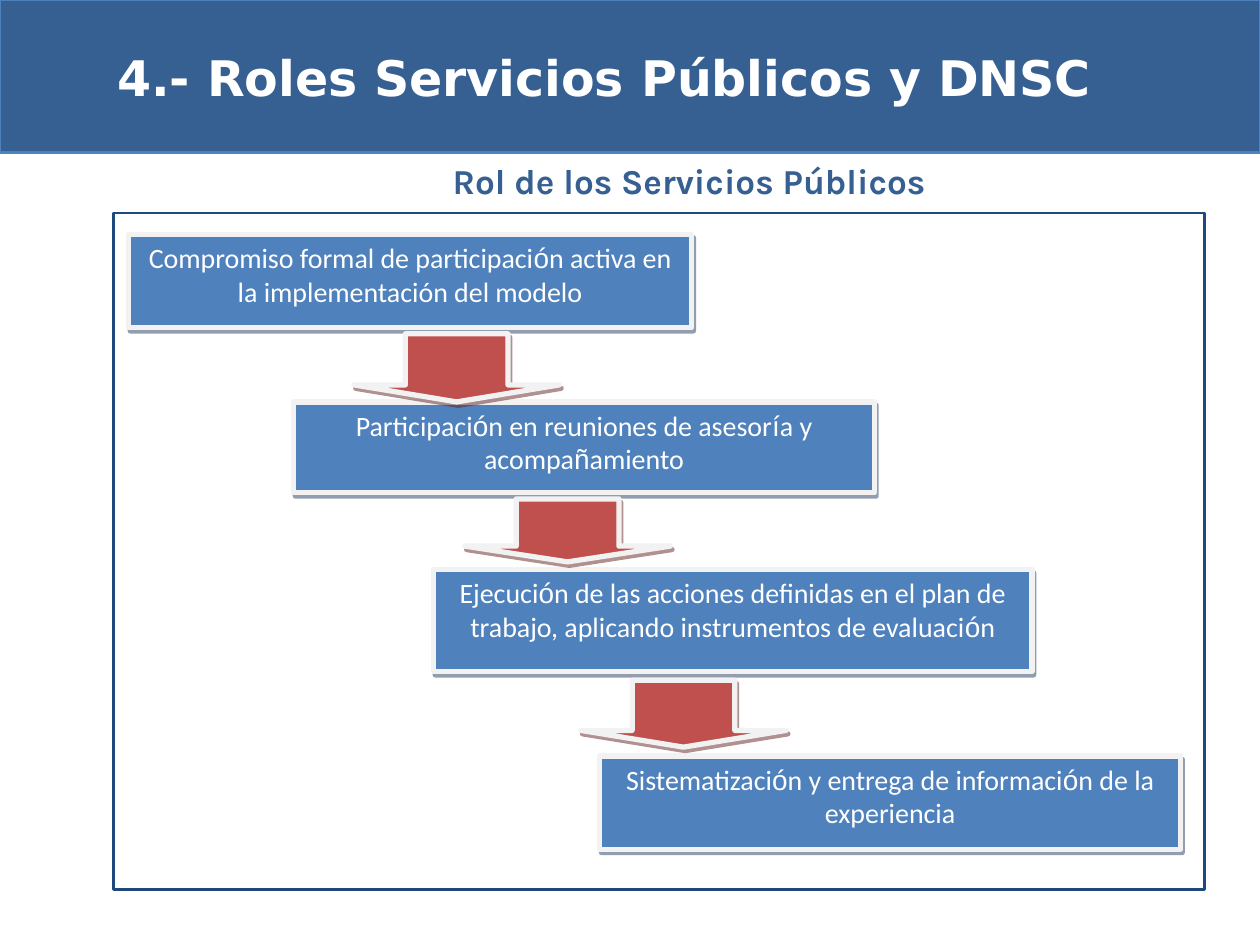
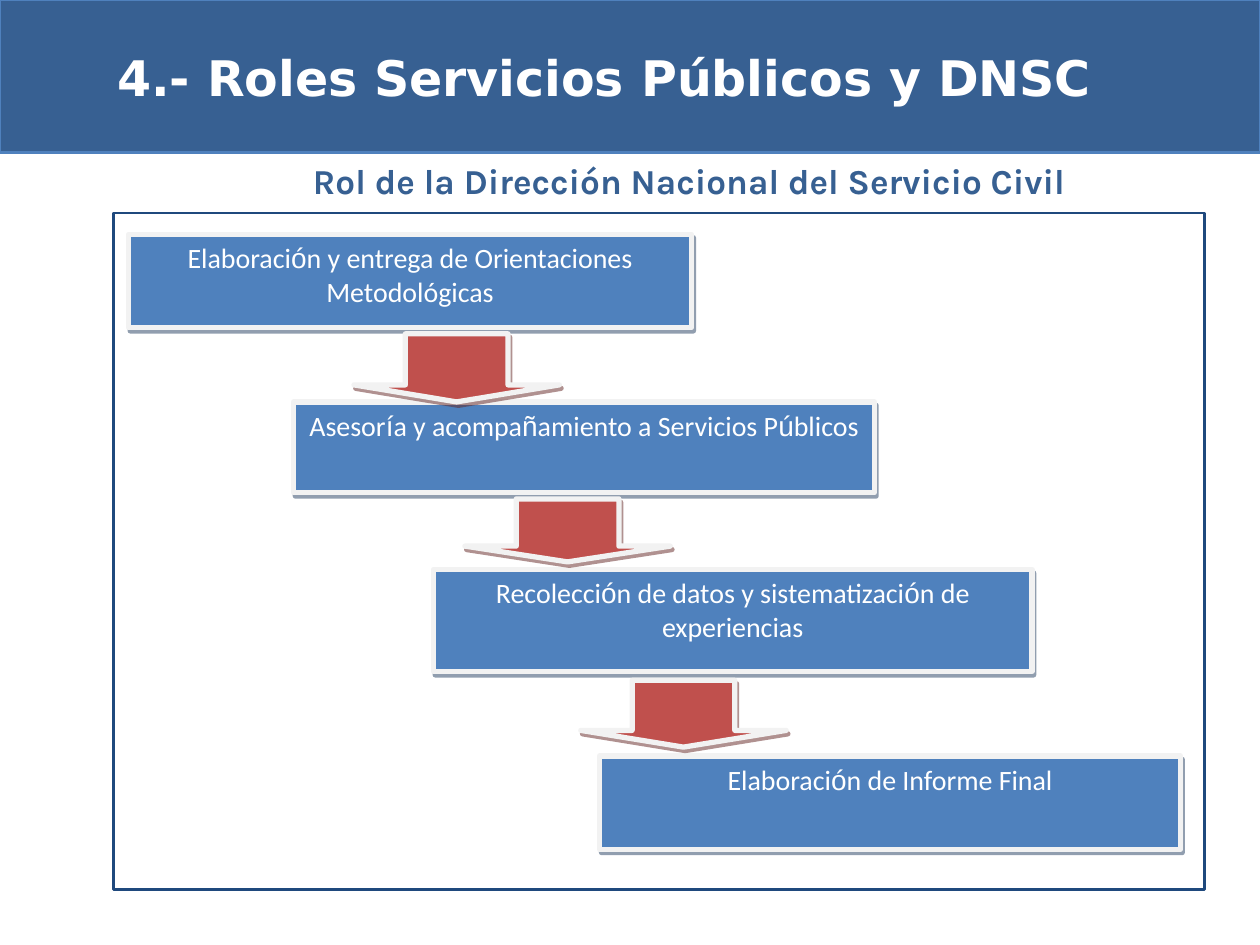
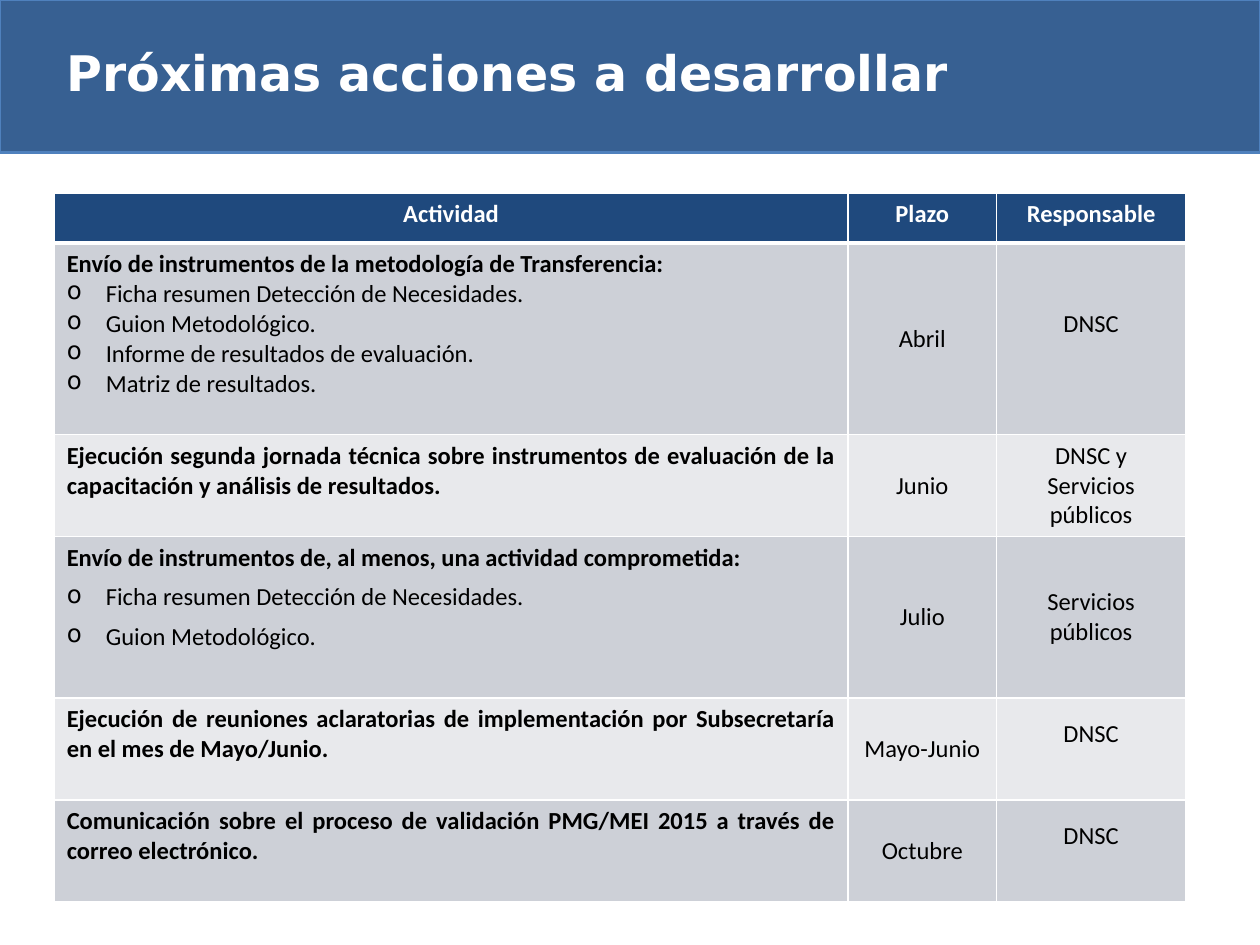
from lxml.etree import SubElement
from pptx import Presentation
from pptx.dml.color import RGBColor
from pptx.enum.shapes import MSO_SHAPE as Preset
from pptx.enum.text import MSO_ANCHOR as Anchor, MSO_AUTO_SIZE as AutoSize, PP_ALIGN as Align
from pptx.oxml.ns import qn
from pptx.util import Inches, Pt

COLORS = {
    "band": "376092", "blue": "4F81BD", "navy": "1F497D", "red": "C0504D",
    "edge": "F2F2F2", "white": "FFFFFF", "black": "000000",
    "blue_shadow": "243F60", "red_shadow": "622423",
    "odd_row": "CDD0D7", "even_row": "E8E9EC",
}
ROLES_TITLE = "4.- Roles Servicios Públicos y DNSC"
# Letters between bars are set in Arial, the rest in Calibri.
ROLES = [
    ("Rol de los Servicios Públicos", [
        "Compromiso formal de participaci|ó|n activa en la implementación del modelo",
        "Participaci|ó|n en reuniones de asesor|í|a y acompa|ñ|amiento",
        "Ejecuci|ó|n de las acciones definidas en el plan de trabajo, "
        "aplicando instrumentos de evaluaci|ó|n",
        "Sistematizaci|ó|n y entrega de informaci|ó|n de la experiencia",
    ]),
    ("Rol de la Dirección Nacional del Servicio Civil", [
        "Elaboraci|ó|n y entrega de Orientaciones Metodológicas",
        "Asesor|í|a y acompa|ñ|amiento a Servicios P|ú|blicos",
        "Recolecci|ó|n de datos y sistematizaci|ó|n de experiencias",
        "Elaboraci|ó|n de Informe Final",
    ]),
]
STEPS = [(1.02, 1.86, 4.47, 0.74), (2.33, 3.19, 4.61, 0.72),
         (3.44, 4.52, 4.75, 0.81), (4.76, 6, 4.61, 0.74)]
ARROWS = [(2.81, 2.65, 1.63, 0.54), (3.69, 3.96, 1.63, 0.5), (4.61, 5.4, 1.63, 0.53)]
FRAME = (0.9, 1.69, 8.66, 5.37)

HEADINGS = ["Actividad", "Plazo", "Responsable"]
COLUMN_WIDTHS = [6.3, 1.18, 1.5]
HEADING_HEIGHT = 0.4
ACTIONS = [
    {"height": 1.52, "activity": "Envío de instrumentos de la metodología de Transferencia:",
     "items": ["Ficha resumen Detección de Necesidades.", "Guion Metodológico.",
               "Informe de resultados de evaluación.", "Matriz de resultados."],
     "date": "Abril", "owner": ["DNSC"], "lift": 0.24},
    {"height": 0.81, "activity": "Ejecución segunda jornada técnica sobre instrumentos de "
     "evaluación de la capacitación y análisis de resultados.",
     "date": "Junio", "owner": ["DNSC y", "Servicios públicos"]},
    {"height": 1.28, "activity": "Envío de instrumentos de, al menos, una actividad comprometida:",
     "items": ["Ficha resumen Detección de Necesidades.", "Guion Metodológico."],
     "gap": 5.6, "date": "Julio", "owner": ["Servicios públicos"]},
    {"height": 0.81, "activity": "Ejecución de reuniones aclaratorias de implementación por "
     "Subsecretaría en el mes de Mayo/Junio.",
     "date": "Mayo-Junio", "owner": ["DNSC"], "lift": 0.24},
    {"height": 0.81, "activity": "Comunicación sobre el proceso de validación PMG/MEI 2015 "
     "a través de correo electrónico.",
     "date": "Octubre", "owner": ["DNSC"], "lift": 0.24},
]


def rgb(name):
    return RGBColor.from_string(COLORS[name])


def inches(place):
    return [Inches(value) for value in place]


def write(frame, text, *, size, color, font="Calibri", accent_font="Arial", bold=False,
          align=Align.LEFT, gap=0, bullet=False, more=False):
    para = frame.add_paragraph() if more else frame.paragraphs[0]
    if bullet:
        properties = para._p.get_or_add_pPr()
        properties.set("marL", str(Inches(0.31)))
        properties.set("indent", str(-Inches(0.31)))
        SubElement(properties, qn("a:buChar")).set("char", "o")
    para.alignment = align
    para.space_before = Pt(0)
    para.space_after = Pt(gap)
    for index, part in enumerate(text.split("|")):
        span = para.add_run()
        span.text = part
        span.font.name = accent_font if index % 2 else font
        span.font.size = Pt(size)
        span.font.bold = bold
        span.font.color.rgb = rgb(color)


def add_box(slide, preset, place, *, fill=None, line, width, shadow=None):
    box = slide.shapes.add_shape(preset, *inches(place))
    box.shadow.inherit = False
    if fill:
        box.fill.solid()
        box.fill.fore_color.rgb = rgb(fill)
    else:
        box.fill.background()
    box.line.color.rgb = rgb(line)
    box.line.width = Pt(width)
    if shadow:
        effects = box.element.spPr.find(qn("a:effectLst"))
        outer = SubElement(effects, qn("a:outerShdw"), blurRad="0", dist=str(Pt(2.2)),
                           dir=str(63 * 60000), algn="ctr", rotWithShape="0")
        tint = SubElement(outer, qn("a:srgbClr"), val=COLORS[shadow])
        SubElement(tint, qn("a:alpha"), val="50000")
    return box


def add_slide(deck, title, place):
    slide = deck.slides.add_slide(deck.slide_layouts[5])
    holder = slide.shapes.title
    holder.left, holder.top, holder.width, holder.height = inches(place)
    frame = holder.text_frame
    frame.auto_size = AutoSize.NONE
    frame.word_wrap = True
    frame.vertical_anchor = Anchor.TOP
    frame.margin_top = Inches(0.07)
    write(frame, title, size=28, color="white", font="DejaVu Sans", bold=True)
    return slide


def add_band(deck):
    band = add_box(deck.slides[0], Preset.RECTANGLE, (0, 0, 10, 1.21),
                   fill="band", line="blue", width=1.5)
    deck.slide_layouts[5].placeholders[0].element.addprevious(band.element)


def add_roles(deck, subtitle, steps):
    slide = add_slide(deck, ROLES_TITLE, (0.83, 0.31, 8.73, 0.82))
    frame = slide.shapes.add_textbox(*inches((0.83, 0.93, 8.74, 0.77))).text_frame
    frame.word_wrap = True
    frame.vertical_anchor = Anchor.BOTTOM
    frame.margin_left = Inches(0.64)
    frame.margin_bottom = Inches(0.1)
    write(frame, subtitle, size=20, color="band", font="Karla", bold=True, align=Align.CENTER)
    for place, step in zip(STEPS, steps):
        box = add_box(slide, Preset.RECTANGLE, place, fill="blue", line="edge", width=3,
                      shadow="blue_shadow")
        box.text_frame.word_wrap = True
        box.text_frame.vertical_anchor = Anchor.TOP
        write(box.text_frame, step, size=16, color="white", align=Align.CENTER)
    for place in ARROWS:
        arrow = add_box(slide, Preset.DOWN_ARROW, place, fill="red", line="edge", width=3,
                        shadow="red_shadow")
        arrow.adjustments[0], arrow.adjustments[1] = 0.5, 0.25
    add_box(slide, Preset.RECTANGLE, FRAME, line="navy", width=1.5)


def style_cell(cell, fill, anchor, bottom=1):
    properties = cell._tc.get_or_add_tcPr()
    for side, width in (("L", 1), ("R", 1), ("T", 1), ("B", bottom)):
        line = SubElement(properties, qn(f"a:ln{side}"), w=str(Pt(width)))
        SubElement(SubElement(line, qn("a:solidFill")), qn("a:srgbClr"), val=COLORS["white"])
    cell.fill.solid()
    cell.fill.fore_color.rgb = rgb(fill)
    cell.vertical_anchor = anchor


def add_actions(deck):
    slide = add_slide(deck, "Próximas acciones a desarrollar", (0.43, 0.27, 9.45, 0.82))
    heights = [HEADING_HEIGHT] + [action["height"] for action in ACTIONS]
    place = (0.43, 1.53, sum(COLUMN_WIDTHS), sum(heights))
    table = slide.shapes.add_table(len(heights), len(HEADINGS), *inches(place)).table
    for column, width in zip(table.columns, COLUMN_WIDTHS):
        column.width = Inches(width)
    for row, height in zip(table.rows, heights):
        row.height = Inches(height)
    for cell, heading in zip(table.rows[0].cells, HEADINGS):
        style_cell(cell, "navy", Anchor.TOP, bottom=3)
        write(cell.text_frame, heading, size=14, color="white", bold=True, align=Align.CENTER)
    body = {"size": 14, "color": "black"}
    for number, action in enumerate(ACTIONS, 1):
        activity, date, owner = table.rows[number].cells
        fill = "odd_row" if number % 2 else "even_row"
        for cell in (activity, date, owner):
            style_cell(cell, fill, Anchor.TOP if cell is activity else Anchor.MIDDLE)
        gap = action.get("gap", 0)
        write(activity.text_frame, action["activity"], bold=True, align=Align.JUSTIFY,
              gap=gap, **body)
        for item in action.get("items", []):
            write(activity.text_frame, item, align=Align.JUSTIFY, gap=gap, bullet=True,
                  more=True, **body)
        write(date.text_frame, action["date"], align=Align.CENTER, **body)
        owner.margin_bottom = Inches(0.05 + action.get("lift", 0))
        for index, line in enumerate(action["owner"]):
            write(owner.text_frame, line, align=Align.CENTER, more=index > 0, **body)


def main():
    deck = Presentation()
    deck.slide_width, deck.slide_height = Inches(10), Inches(7.5)
    for subtitle, steps in ROLES:
        add_roles(deck, subtitle, steps)
    add_actions(deck)
    add_band(deck)
    deck.save("out.pptx")


if __name__ == "__main__":
    main()
